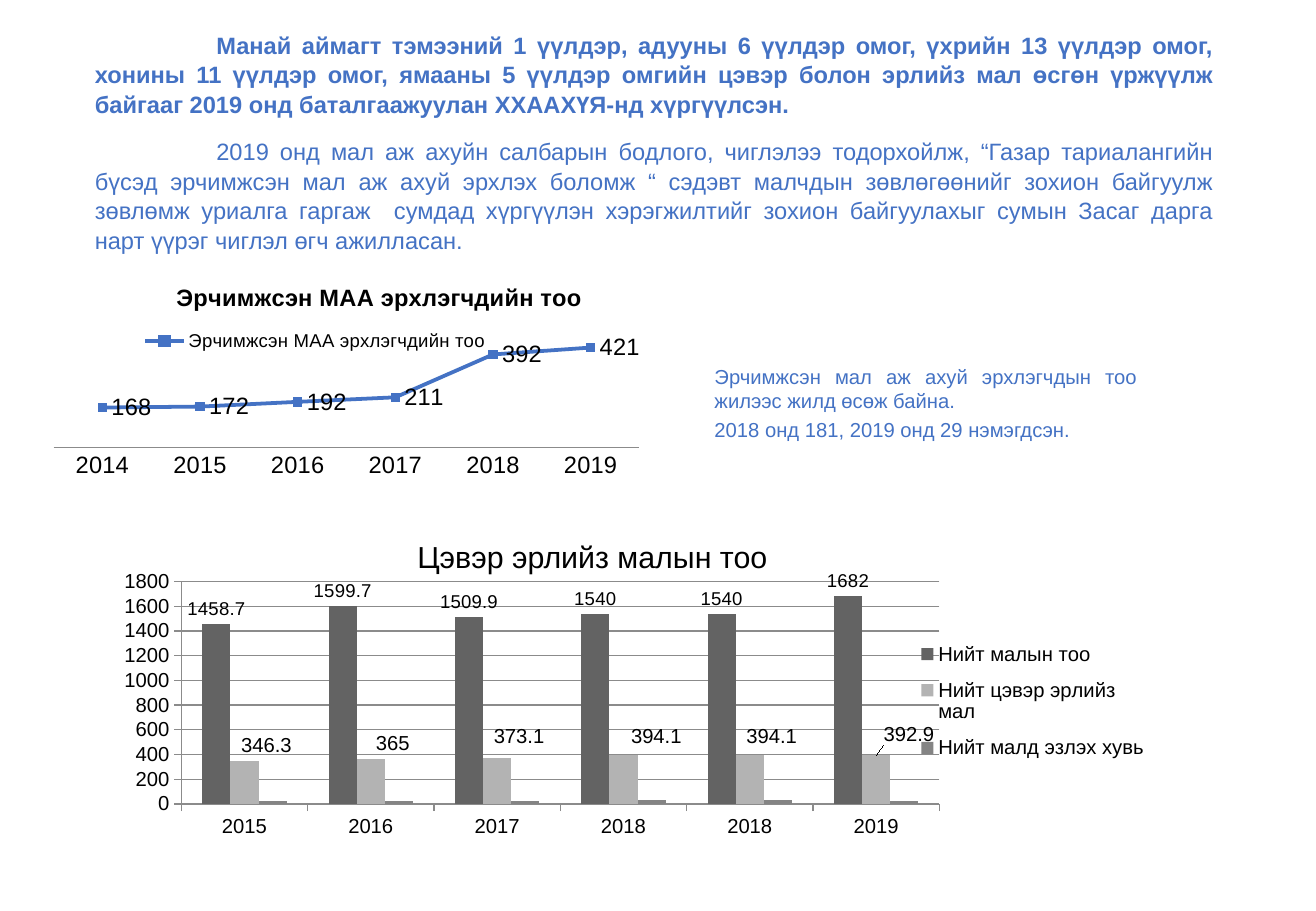
from dataclasses import dataclass
from lxml.etree import SubElement
from pptx import Presentation
from pptx.chart.data import CategoryChartData as Data
from pptx.dml.color import RGBColor as RGB
from pptx.enum.chart import XL_CHART_TYPE as Kind
from pptx.enum.chart import XL_LABEL_POSITION as Spot
from pptx.enum.chart import XL_LEGEND_POSITION as Side
from pptx.enum.chart import XL_TICK_LABEL_POSITION as Tags
from pptx.enum.chart import XL_TICK_MARK as Tick
from pptx.enum.text import MSO_ANCHOR as Anchor
from pptx.enum.text import MSO_AUTO_SIZE as Fit
from pptx.enum.text import PP_ALIGN as Align
from pptx.oxml.ns import qn
from pptx.util import Inches, Pt


@dataclass(frozen=True)
class Theme:
    face: str = "Arial"
    blue: RGB = RGB(0x44, 0x72, 0xC4)
    black: RGB = RGB(0, 0, 0)
    rule: RGB = RGB(0x8B, 0x8B, 0x8B)
    bars: tuple = (RGB(0x63, 0x63, 0x63), RGB(0xB3, 0xB3, 0xB3), RGB(0x84, 0x84, 0x84))
    head: int = 18
    lead: int = 14
    note: int = 12
    small: int = 11


theme = Theme()

INTRO = (
    "Манай аймагт тэмээний 1 үүлдэр, адууны 6 үүлдэр омог, үхрийн 13 үүлдэр омог, "
    "хонины 11 үүлдэр омог, ямааны 5 үүлдэр омгийн цэвэр болон эрлийз мал өсгөн үржүүлж "
    "байгааг 2019 онд баталгаажуулан ХХААХҮЯ-нд хүргүүлсэн.",
    "2019 онд мал аж ахуйн салбарын бодлого, чиглэлээ тодорхойлж, “Газар тариалангийн "
    "бүсэд эрчимжсэн мал аж ахуй эрхлэх боломж “ сэдэвт малчдын зөвлөгөөнийг зохион байгуулж "
    "зөвлөмж уриалга гаргаж  сумдад хүргүүлэн хэрэгжилтийг зохион байгуулахыг сумын Засаг дарга "
    "нарт үүрэг чиглэл өгч ажилласан.",
)
NOTE = (
    "Эрчимжсэн мал аж ахуй эрхлэгчдын тоо жилээс жилд өсөж байна.",
    "2018 онд 181, 2019 онд 29 нэмэгдсэн.",
)
HEAD = "Цэвэр эрлийз малын тоо"
FARMS = "Эрчимжсэн МАА эрхлэгчдийн тоо"
YEARS = ("2014", "2015", "2016", "2017", "2018", "2019")
COUNT = (168, 172, 192, 211, 392, 421)
SPAN = ("2015", "2016", "2017", "2018", "2018", "2019")
HERD = {
    "Нийт малын тоо": (1458.7, 1599.7, 1509.9, 1540, 1540, 1682),
    "Нийт цэвэр эрлийз мал": (346.3, 365, 373.1, 394.1, 394.1, 392.9),
    "Нийт малд эзлэх хувь": (20, 20, 20, 30, 30, 20),
}
SHIFTS = ((0.02, 0), (0.02, 0), (0.02, -0.02), (0.03, -0.01), (0.02, -0.01), (0.03, -0.02))


def style(font, size, color=theme.black, bold=False):
    font.name = theme.face
    font.size = Pt(size)
    font.bold = bold
    font.color.rgb = color


def place(shape, box):
    shape.left, shape.top, shape.width, shape.height = map(Inches, box)


def layout(node, index, inner=False, **parts):
    for old in node.findall(qn("c:layout")):
        node.remove(old)
    frame = SubElement(node, qn("c:layout"))
    node.insert(index, frame)
    manual = SubElement(frame, qn("c:manualLayout"))
    if inner:
        SubElement(manual, qn("c:layoutTarget")).set("val", "inner")
    if "w" in parts or inner or node.tag == qn("c:title"):
        for mode in ("xMode", "yMode"):
            SubElement(manual, qn(f"c:{mode}")).set("val", "edge")
    for key, value in parts.items():
        SubElement(manual, qn(f"c:{key}")).set("val", str(value))


def prose(shape, box, lines, size, indent=0, before=0, after=0, pitch=1.0):
    place(shape, box)
    frame = shape.text_frame
    frame.text = "\n".join(lines)
    frame.word_wrap = True
    frame.auto_size = Fit.NONE
    frame.vertical_anchor = Anchor.TOP
    for i, para in enumerate(frame.paragraphs):
        style(para.font, size, theme.blue)
        para.alignment = Align.JUSTIFY
        para.line_spacing = pitch
        para.space_before = Pt(before if i else 0)
        para.space_after = Pt(after)
        props = para.font._element.getparent()
        props.set("marL", "0")
        props.set("indent", str(Inches(indent)))
        props.insert_element_before(props.makeelement(qn("a:buNone")), "a:tabLst", "a:defRPr")


def heading(shape, box):
    place(shape, box)
    frame = shape.text_frame
    frame.text = HEAD
    frame.auto_size = Fit.NONE
    frame.vertical_anchor = Anchor.TOP
    frame.paragraphs[0].alignment = Align.CENTER
    style(frame.paragraphs[0].font, theme.head)


def graph(slide, box, kind, cats, rows, size, side):
    data = Data()
    data.categories = cats
    for name, vals in rows.items():
        data.add_series(name, vals)
    chart = slide.shapes.add_chart(kind, *map(Inches, box), data).chart
    style(chart.font, size)
    chart.has_title = False
    chart.has_legend = True
    chart.legend.position = side
    chart.legend.include_in_layout = False
    chart.plots[0].vary_by_categories = False
    axis = chart.category_axis
    style(axis.tick_labels.font, size)
    axis.format.line.color.rgb = theme.rule
    axis.format.line.width = Pt(0.75)
    return chart


def label(row, size, spot):
    tags = row.data_labels
    tags.show_value = True
    tags.position = spot
    style(tags.font, size)


def trend(slide, box):
    chart = graph(slide, box, Kind.LINE, YEARS, {FARMS: COUNT}, theme.lead, Side.TOP)
    chart.has_title = True
    frame = chart.chart_title.text_frame
    frame.text = FARMS
    style(frame.paragraphs[0].font, theme.lead, bold=True)
    layout(chart.chart_title._element, 1, x=0.2, y=0.11)
    style(chart.legend.font, theme.small)
    layout(chart.legend._element, 1, x=0.14, y=0.32, w=0.58, h=0.12)
    layout(chart._chartSpace.chart.plotArea, 0, True, x=0.01, y=0.38, w=0.94, h=0.46)
    chart.category_axis.major_tick_mark = Tick.NONE
    axis = chart.value_axis
    axis.visible = False
    axis.has_major_gridlines = False
    axis.minimum_scale, axis.maximum_scale = 0, 450
    row = chart.series[0]
    row.smooth = False
    row.marker.style = None
    row.format.line.color.rgb = theme.blue
    row.format.line.width = Pt(2.25)
    label(row, theme.lead, Spot.RIGHT)


def herd(slide, box):
    chart = graph(slide, box, Kind.COLUMN_CLUSTERED, SPAN, HERD, theme.note, Side.RIGHT)
    style(chart.legend.font, theme.note)
    layout(chart.legend._element, 1, x=0.74, y=0.23, w=0.21, h=0.52)
    layout(chart._chartSpace.chart.plotArea, 0, True, x=0.07, y=0.06, w=0.69, h=0.8)
    chart.plots[0].gap_width = 150
    chart.plots[0].overlap = 0
    axis = chart.value_axis
    axis.minimum_scale, axis.maximum_scale, axis.major_unit = 0, 1800, 200
    style(axis.tick_labels.font, theme.note)
    for line in (axis.format.line, axis.major_gridlines.format.line):
        line.color.rgb = theme.rule
        line.width = Pt(0.75)
    for each in (axis, chart.category_axis):
        each.major_tick_mark = Tick.OUTSIDE
        each.tick_label_position = Tags.LOW
    rows = list(chart.series)
    for row, color in zip(rows, theme.bars):
        row.format.fill.solid()
        row.format.fill.fore_color.rgb = color
    label(rows[0], theme.small, Spot.OUTSIDE_END)
    label(rows[1], theme.note, Spot.OUTSIDE_END)
    for i, _ in enumerate(SHIFTS):
        tag = rows[1].points[i].data_label
        style(tag.font, theme.note)
        tag.position = Spot.OUTSIDE_END
    for node, (x, y) in zip(rows[1]._element.iter(qn("c:dLbl")), SHIFTS):
        layout(node, 1, x=x, y=y)


def main():
    deck = Presentation()
    deck.slide_width, deck.slide_height = Inches(10.83), Inches(7.5)
    slide = deck.slides.add_slide(deck.slide_layouts[3])
    title, intro, note = list(slide.placeholders)[:3]
    trend(slide, (0.39, 2.08, 5.13, 1.91))
    herd(slide, (0.86, 4.65, 9.04, 2.29))
    heading(title, (1.99, 4.38, 5.77, 0.4))
    prose(note, (5.78, 2.95, 3.68, 1.2), NOTE, theme.note, before=2.4)
    prose(intro, (0.68, 0.19, 9.41, 1.89), INTRO, theme.lead, indent=1, after=10, pitch=1.05)
    intro.text_frame.paragraphs[0].font.bold = True
    deck.save("out.pptx")


if __name__ == "__main__":
    main()
